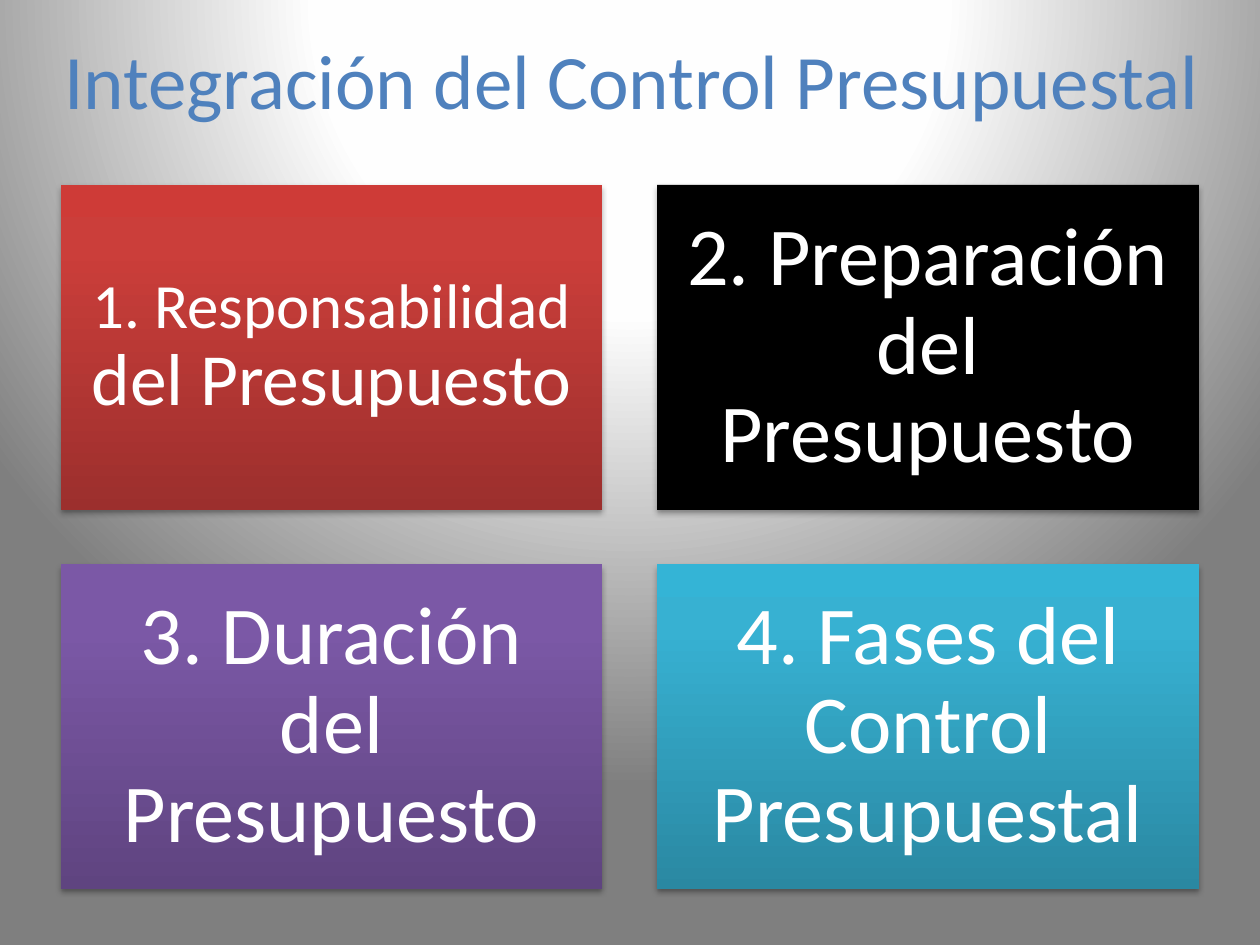
from dataclasses import dataclass

from lxml.etree import SubElement
from pptx import Presentation
from pptx.dml.color import RGBColor as RGB
from pptx.enum.shapes import MSO_SHAPE as Shape
from pptx.enum.text import MSO_ANCHOR as Anchor, MSO_AUTO_SIZE as Auto, PP_ALIGN as Align
from pptx.oxml import parse_xml
from pptx.oxml.ns import nsdecls, qn
from pptx.util import Cm, Pt


@dataclass(frozen=True)
class Theme:
    font: str = "Calibri"
    title: str = "4F81BD"
    text: str = "FFFFFF"
    black: str = "000000"
    back: tuple = ((0, "FFFFFF"), (40, "FEFEFE"), (100, "7F7F7F"))
    red: tuple = ((0, "9C2F2D"), (80, "CB3E3A"), (100, "CE3B37"))
    purple: tuple = ((0, "5F4480"), (80, "7B58A6"), (100, "7C57A8"))
    cyan: tuple = ((0, "2A88A2"), (80, "37B1D2"), (100, "34B4D6"))
    head: int = 44
    large: int = 47
    mid: int = 42
    small: int = 36


T = Theme()
UPWARD = '<a:lin ang="16200000" scaled="0"/>'
CIRCLE = ('<a:path path="circle"><a:fillToRect l="50000" t="-80000" '
          'r="50000" b="180000"/></a:path>')

# text runs with sizes, fill, inner margin in cm
CARDS = [
    ([("1. Responsabilidad ", T.small), ("del Presupuesto", T.mid)], T.red, 0.38),
    ([("2. Preparación del Presupuesto", T.large)], T.black, 0.51),
    ([("3. Duración del Presupuesto", T.large)], T.purple, 0.51),
    ([("4. Fases del Control Presupuestal", T.large)], T.cyan, 0.51),
]


def set_all(item, **values):
    for name, value in values.items():
        setattr(item, name, value)


def blend(parent, stops, way):
    """Replace the solid fill inside parent with a gradient."""
    marks = "".join(f'<a:gs pos="{pos * 1000}"><a:srgbClr val="{color}"/></a:gs>'
                    for pos, color in stops)
    grad = parse_xml(f'<a:gradFill {nsdecls("a")} rotWithShape="1">'
                     f'<a:gsLst>{marks}</a:gsLst>{way}</a:gradFill>')
    parent.replace(parent.find(qn("a:solidFill")), grad)


def shade(shape):
    """Give the shape a soft shadow below it."""
    shape.shadow.inherit = False
    effects = shape.element.spPr.find(qn("a:effectLst"))
    effects.append(parse_xml(
        f'<a:outerShdw {nsdecls("a")} blurRad="{Pt(3.1)}" dist="{Pt(1.8)}" '
        'dir="5400000" rotWithShape="0"><a:srgbClr val="000000">'
        '<a:alpha val="35000"/></a:srgbClr></a:outerShdw>'))


def write(para, text, size, color):
    run = para.add_run()
    run.text = text
    set_all(run.font, name=T.font, size=Pt(size))
    run.font.color.rgb = RGB.from_string(color)


def add_back(slide):
    slide.background.fill.solid()
    blend(slide.element.find(f".//{qn('p:bgPr')}"), T.back, CIRCLE)


def add_title(slide, left, top, width, height):
    title = slide.shapes.title
    set_all(title, left=Cm(left), top=Cm(top), width=Cm(width), height=Cm(height))
    frame = title.text_frame
    set_all(frame, word_wrap=True, auto_size=Auto.SHAPE_TO_FIT_TEXT,
            vertical_anchor=Anchor.TOP)
    para = frame.paragraphs[0]
    para.alignment = Align.CENTER
    write(para, "Integración del Control Presupuestal", T.head, T.title)


def add_card(slide, box, runs, fill, inset):
    card = slide.shapes.add_shape(Shape.RECTANGLE, *map(Cm, box))
    card.line.fill.background()
    card.fill.solid()
    if isinstance(fill, str):
        card.fill.fore_color.rgb = RGB.from_string(fill)
    else:
        blend(card.element.spPr, fill, UPWARD)
    shade(card)
    frame = card.text_frame
    set_all(frame, word_wrap=True, vertical_anchor=Anchor.MIDDLE)
    for side in ("left", "top", "right", "bottom"):
        setattr(frame, f"margin_{side}", Cm(inset))
    para = frame.paragraphs[0]
    set_all(para, alignment=Align.CENTER, line_spacing=0.9)
    # space after as a share of the type size
    after = SubElement(para._p.get_or_add_pPr(), qn("a:spcAft"))
    SubElement(after, qn("a:spcPct"), val="35000")
    for text, size in runs:
        write(para, text, size, T.text)


def add_grid(slide, left, top, width, height, gap=1.1, cols=2):
    rows = -(-len(CARDS) // cols)
    wide = (width - gap * (cols - 1)) / cols
    high = (height - gap * (rows - 1)) / rows
    for index, card in enumerate(CARDS):
        row, col = divmod(index, cols)
        box = (left + col * (wide + gap), top + row * (high + gap), wide, high)
        add_card(slide, box, *card)


def main():
    deck = Presentation()
    set_all(deck, slide_width=Cm(25.4), slide_height=Cm(19.05))
    slide = deck.slides.add_slide(deck.slide_layouts.get_by_name("Title Only"))
    add_back(slide)
    add_title(slide, 0.08, 0.53, 25.32, 2.13)
    add_grid(slide, 1.22, 3.73, 22.95, 14.2)
    deck.save("out.pptx")


if __name__ == "__main__":
    main()
